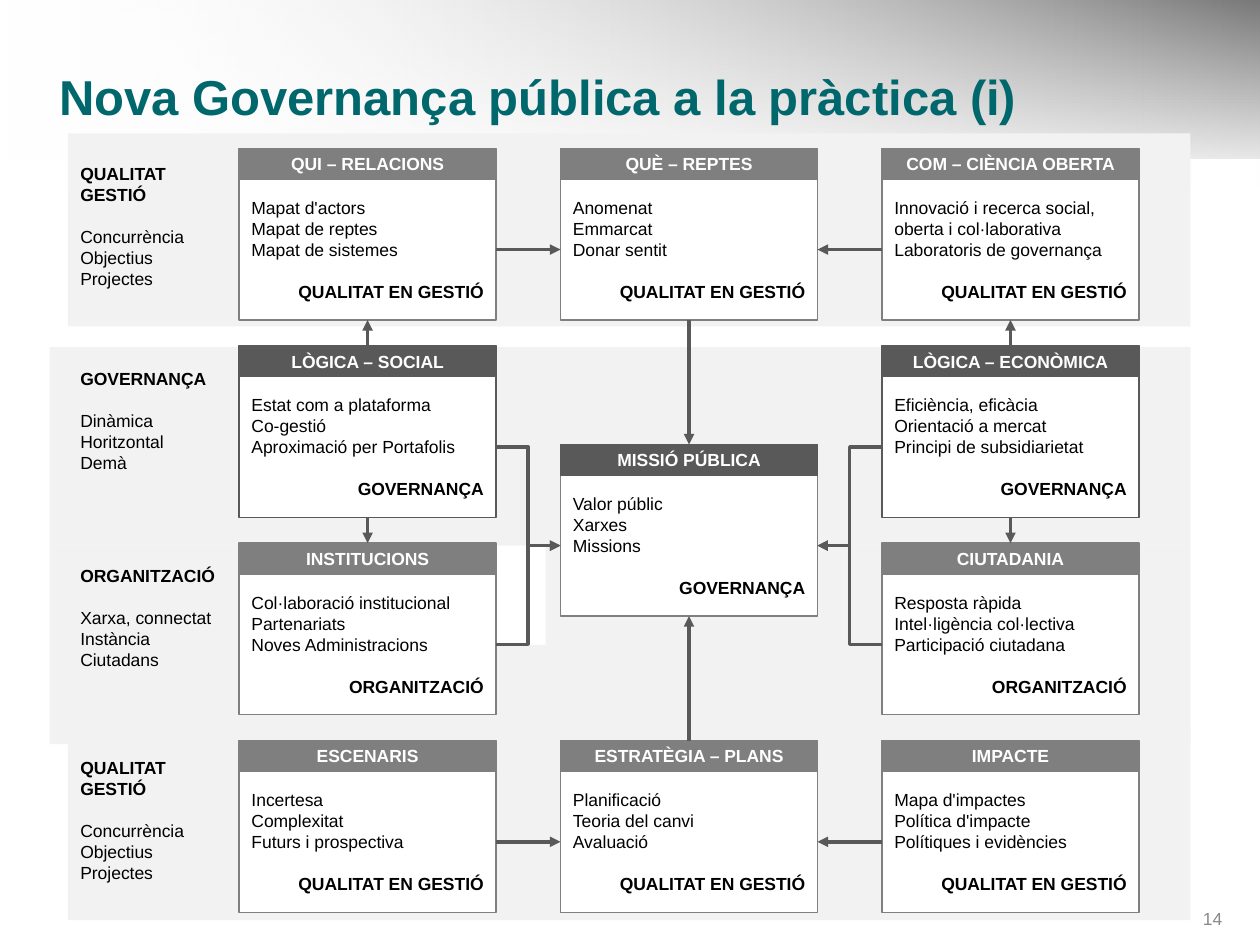
from dataclasses import dataclass

from lxml import etree
from pptx import Presentation
from pptx.dml.color import RGBColor
from pptx.enum.shapes import MSO_CONNECTOR, MSO_SHAPE
from pptx.enum.text import MSO_ANCHOR, MSO_AUTO_SIZE, PP_ALIGN
from pptx.oxml.ns import qn
from pptx.util import Cm, Pt

RECT = MSO_SHAPE.RECTANGLE
STRAIGHT, ELBOW = MSO_CONNECTOR.STRAIGHT, MSO_CONNECTOR.ELBOW
LEFT, CENTER, RIGHT = PP_ALIGN.LEFT, PP_ALIGN.CENTER, PP_ALIGN.RIGHT
MIDDLE = MSO_ANCHOR.MIDDLE
NO_FIT = MSO_AUTO_SIZE.NONE
# Connection sites of a rectangle
TOP, WEST, BOTTOM, EAST = range(4)


@dataclass(frozen=True)
class Theme:
    font: str = "Arial"
    teal: str = "00676C"
    dark: str = "595959"
    mid: str = "7F7F7F"
    band: str = "F2F2F2"
    white: str = "FFFFFF"
    black: str = "000000"
    pale: str = "898989"
    title: int = 28
    text: int = 10
    gap: int = 12
    hair: int = 0


# Card grid, in cm
X0, Y0, DX, DY = 4.82, 2.99, 6.48, 3.98
WIDE, HEAD, BODY = 5.18, 0.62, 2.84
EDGE, SPAN, TALL = 1.37, 22.63, 3.89

GOV, ORG, QUAL = "GOVERNANÇA", "ORGANITZACIÓ", "QUALITAT EN GESTIÓ"
# Column, row, heading, lines, closing line
CARDS = [
    (0, 0, "QUI – RELACIONS",
     "Mapat d'actors\nMapat de reptes\nMapat de sistemes", QUAL),
    (1, 0, "QUÈ – REPTES", "Anomenat\nEmmarcat\nDonar sentit", QUAL),
    (2, 0, "COM – CIÈNCIA OBERTA",
     "Innovació i recerca social, oberta i col·laborativa\n"
     "Laboratoris de governança", QUAL),
    (0, 1, "LÒGICA – SOCIAL",
     "Estat com a plataforma\nCo-gestió\nAproximació per Portafolis", GOV),
    (2, 1, "LÒGICA – ECONÒMICA",
     "Eficiència, eficàcia\nOrientació a mercat\nPrincipi de subsidiarietat", GOV),
    (1, 1.5, "MISSIÓ PÚBLICA", "Valor públic\nXarxes\nMissions", GOV),
    (0, 2, "INSTITUCIONS",
     "Col·laboració institucional\nPartenariats\nNoves Administracions", ORG),
    (2, 2, "CIUTADANIA",
     "Resposta ràpida\nIntel·ligència col·lectiva\nParticipació ciutadana", ORG),
    (0, 3, "ESCENARIS", "Incertesa\nComplexitat\nFuturs i prospectiva", QUAL),
    (1, 3, "ESTRATÈGIA – PLANS",
     "Planificació\nTeoria del canvi\nAvaluació", QUAL),
    (2, 3, "IMPACTE",
     "Mapa d'impactes\nPolítica d'impacte\nPolítiques i evidències", QUAL),
]

GOV_BAND = [(1.37, 10.64), (1.4, 6.88), (24.03, 6.81), (24, 10.62),
            (16.97, 10.62), (16.97, 12.85), (10.85, 12.88), (10.85, 10.62)]
ORG_BAND = [(1.37, 14.55), (1.4, 10.8), (10.36, 10.77), (10.39, 13.26),
            (17.45, 13.26), (17.42, 10.74), (24, 10.77), (24, 14.53)]
QUAL_TOPS = (2.69, 14.66)
QUAL_SIDE = ("QUALITAT\nGESTIÓ", "Concurrència\nObjectius\nProjectes")


class Board:
    def __init__(self, slide, theme):
        self.slide, self.theme = slide, theme
        self.shapes = slide.shapes

    def style(self, par, color, size=None, bold=False, align=LEFT):
        par.alignment = align
        for run in par.runs:
            font = run.font
            font.name, font.bold = self.theme.font, bold
            font.size = Pt(size or self.theme.text)
            font.color.rgb = RGBColor.from_string(color)

    def paint(self, shape, fill, line=None):
        shape.shadow.inherit = False
        shape.fill.solid()
        shape.fill.fore_color.rgb = RGBColor.from_string(fill)
        if line:
            shape.line.color.rgb = RGBColor.from_string(line)
            shape.line.width = Pt(self.theme.hair)
        else:
            shape.line.fill.background()

    def rect(self, x, y, w, h, fill, line=None):
        shape = self.shapes.add_shape(RECT, Cm(x), Cm(y), Cm(w), Cm(h))
        self.paint(shape, fill, line)
        return shape

    def wash(self, h, turn, start, end, alpha):
        """Full-width gradient whose first stop has the given alpha in percent."""
        shape = self.rect(0, 0, 25.4, h, start)
        shape.fill.gradient()
        shape.fill.gradient_angle = turn
        stops = shape.fill.gradient_stops
        for stop, color, spot in zip(stops, (start, end), (0, 1)):
            stop.color.rgb = RGBColor.from_string(color)
            stop.position = spot
        tint = next(shape._element.iter(qn("a:srgbClr")))
        etree.SubElement(tint, qn("a:alpha"), val=str(alpha * 1000))

    def title(self, text):
        box = self.shapes.title
        self.shapes._spTree.append(box._element)
        box.left, box.top, box.width, box.height = Cm(0.94), Cm(1.14), Cm(23.37), Cm(1.6)
        frame = box.text_frame
        frame.text = text
        frame.auto_size, frame.vertical_anchor = NO_FIT, MIDDLE
        self.style(frame.paragraphs[0], self.theme.teal, self.theme.title, True)

    def polygon(self, points):
        pen = self.shapes.build_freeform(*points[0], scale=Cm(1))
        pen.add_line_segments(points[1:])
        self.paint(pen.convert_to_shape(), self.theme.band)

    def text(self, x, y, w, h, text):
        box = self.shapes.add_textbox(Cm(x), Cm(y), Cm(w), Cm(h))
        frame = box.text_frame
        frame.word_wrap, frame.vertical_anchor = True, MIDDLE
        frame.text = text
        return frame.paragraphs

    def side(self, y, h, head, lines):
        pars = self.text(EDGE, y, 4, h, f"{head}\n{lines}")
        count = len(head.split("\n"))
        for i, par in enumerate(pars):
            self.style(par, self.theme.black, bold=i < count)
        pars[count].space_before = Pt(self.theme.gap)

    def number(self, text):
        par = self.text(23.29, 18.14, 1.6, 0.74, text)[0]
        self.style(par, self.theme.pale, align=RIGHT)

    def card(self, col, row, head, lines, foot):
        """Draw a heading over a body and return both shapes."""
        look = self.theme
        x, y = X0 + col * DX, Y0 + row * DY
        shade = look.dark if foot == GOV else look.mid
        edge = look.mid if col == 1 else shade
        body = self.rect(x, y + HEAD, WIDE, BODY, look.white, edge)
        frame = body.text_frame
        frame.vertical_anchor = MIDDLE
        frame.text = f"{lines}\n{foot}"
        *pars, last = frame.paragraphs
        for par in pars:
            self.style(par, look.black)
        self.style(last, look.black, bold=True, align=RIGHT)
        last.space_before = Pt(look.gap)

        top = self.rect(x, y, WIDE, HEAD, shade, shade)
        top.text_frame.vertical_anchor = MIDDLE
        top.text_frame.text = head
        self.style(top.text_frame.paragraphs[0], look.white, bold=True, align=CENTER)
        return top, body

    def arrow(self, start, out, end, into, kind=STRAIGHT):
        """Join two shapes at the given connection sites."""
        line = self.shapes.add_connector(kind, 0, 0, 0, 0)
        line.begin_connect(start, out)
        line.end_connect(end, into)
        line.line.color.rgb = RGBColor.from_string(self.theme.dark)
        line.line.width = Pt(self.theme.hair)
        etree.SubElement(line.line._get_or_add_ln(), qn("a:tailEnd"), type="triangle")
        etree.SubElement(line._element.spPr, qn("a:effectLst"))


def main():
    deck = Presentation()
    deck.slide_width, deck.slide_height = Cm(25.4), Cm(19.05)
    look = Theme()
    board = Board(deck.slides.add_slide(deck.slide_layouts[5]), look)

    board.wash(3.2, 0, look.white, look.black, 0)
    board.wash(3.81, 270, look.white, look.white, 47)
    board.number("14")
    board.title("Nova Governança pública a la pràctica (i)")

    board.polygon(GOV_BAND)
    board.side(7.29, 2.39, GOV, "Dinàmica\nHoritzontal\nDemà")
    board.polygon(ORG_BAND)
    board.side(11.25, 2.39, ORG, "Xarxa, connectat\nInstància\nCiutadans")
    for y in QUAL_TOPS:
        board.rect(EDGE, y, SPAN, TALL, look.band)
        board.side(y, 3.73, *QUAL_SIDE)

    heads, bodies = {}, {}
    for col, row, *words in CARDS:
        heads[col, row], bodies[col, row] = board.card(col, row, *words)

    goal = (1, 1.5)
    for col, out, into in ((0, EAST, WEST), (2, WEST, EAST)):
        for row in (0, 3):
            board.arrow(bodies[col, row], out, bodies[1, row], into)
        for row in (1, 2):
            board.arrow(bodies[col, row], out, bodies[goal], into, ELBOW)
        board.arrow(heads[col, 1], TOP, bodies[col, 0], BOTTOM)
        board.arrow(bodies[col, 1], BOTTOM, heads[col, 2], TOP)
    board.arrow(heads[1, 3], TOP, bodies[goal], BOTTOM)
    board.arrow(bodies[1, 0], BOTTOM, heads[goal], TOP)

    deck.save("out.pptx")


if __name__ == "__main__":
    main()
